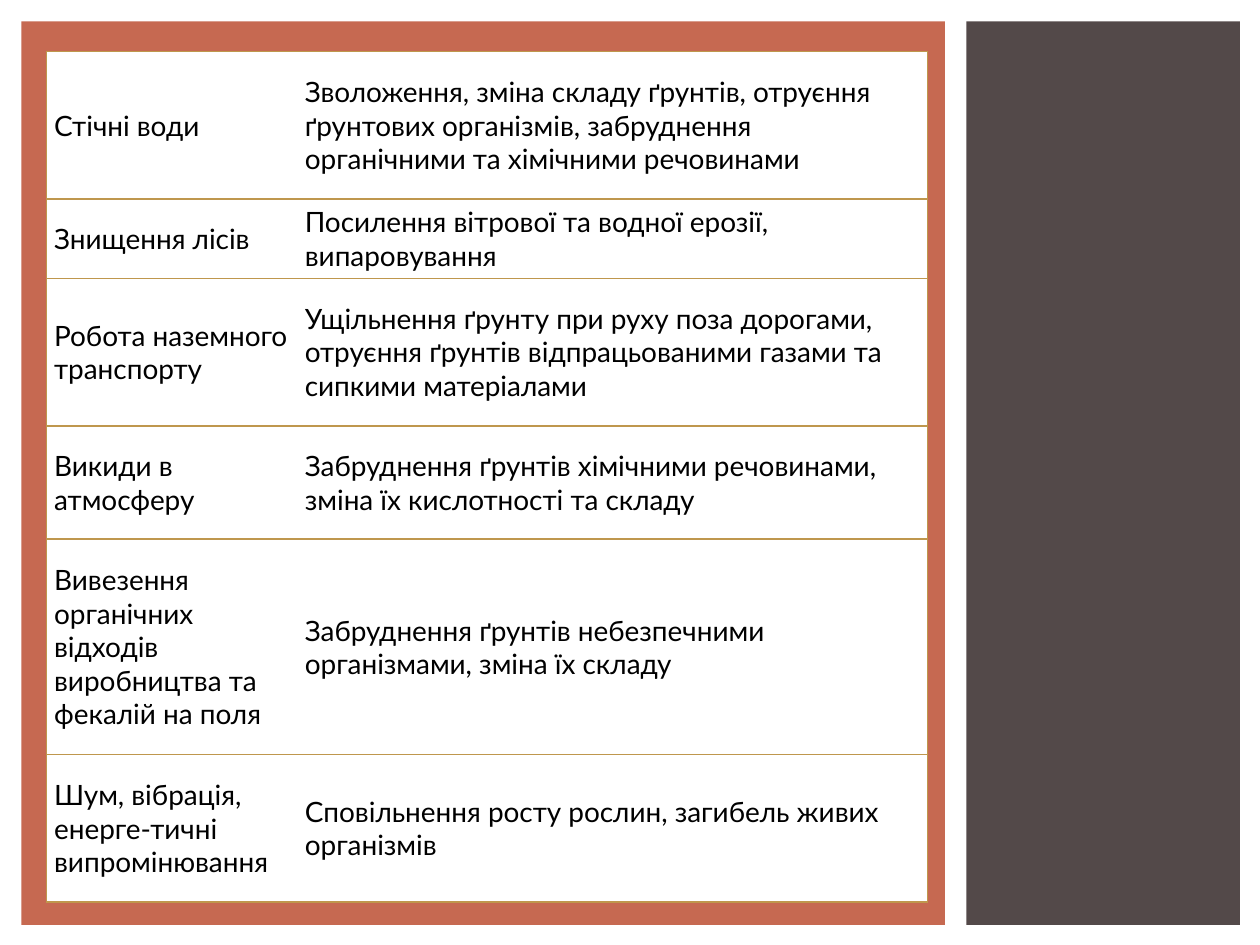
"""Build a slide with a table of soil impacts beside a dark side panel."""
from lxml import etree
from pptx import Presentation
from pptx.dml.color import RGBColor
from pptx.enum import shapes, text
from pptx.oxml import ns
from pptx.util import Inches, Pt

WHITE = RGBColor(0xFF, 0xFF, 0xFF)
BLACK = RGBColor(0x00, 0x00, 0x00)
GOLD = RGBColor(0xBF, 0x97, 0x4D)
TERRACOTTA = RGBColor(0xC6, 0x69, 0x51)
DARK_BROWN = RGBColor(0x53, 0x49, 0x49)

COLUMN_WIDTHS = (1.99, 5)
OUTER_SIDES = ("LTB", "RTB")
IMPACTS = (
    (1.17, "Стічні води",
     "Зволоження, зміна складу ґрунтів, отруєння ґрунтових організмів, "
     "забруднення органічними та хімічними речовинами"),
    (0.63, "Знищення лісів",
     "Посилення вітрової та водної ерозії, випаровування"),
    (1.17, "Робота наземного транспорту",
     "Ущільнення ґрунту при руху поза дорогами, отруєння ґрунтів "
     "відпрацьованими газами та сипкими матеріалами"),
    (0.9, "Викиди в атмосферу",
     "Забруднення ґрунтів хімічними речовинами, зміна їх кислотності та складу"),
    (1.71, "Вивезення органічних відходів виробництва та фекалій на поля",
     "Забруднення ґрунтів небезпечними організмами, зміна їх складу"),
    (1.17, "Шум, вібрація, енерге-тичні випромінювання",
     "Сповільнення росту рослин, загибель живих організмів"),
)
CELL_FORMAT = {
    "vertical_anchor": text.MSO_ANCHOR.MIDDLE,
    "margin_left": Inches(0.06),
    "margin_right": Inches(0.06),
    "margin_top": Inches(0.03),
    "margin_bottom": Inches(0.03),
}
FONT_FORMAT = {"name": "Lato", "size": Pt(16), "bold": False}


def add_panel(slide, left, width, color):
    """Add a full-height background panel."""
    panel = slide.shapes.add_shape(
        shapes.MSO_SHAPE.RECTANGLE,
        Inches(left), Inches(0.17), Inches(width), Inches(7.17))
    panel.shadow.inherit = False
    panel.fill.solid()
    panel.fill.fore_color.rgb = color
    panel.line.fill.background()


def set_borders(cell, sides):
    """Draw gold lines on the given sides of a cell and none on the others."""
    properties = cell._tc.get_or_add_tcPr()
    for position, side in enumerate("LRTB"):
        border = etree.Element(ns.qn(f"a:ln{side}"), w=str(Pt(1)))
        if side in sides:
            fill = etree.SubElement(border, ns.qn("a:solidFill"))
            etree.SubElement(fill, ns.qn("a:srgbClr"), val=str(GOLD))
        else:
            etree.SubElement(border, ns.qn("a:noFill"))
        properties.insert(position, border)


def fill_cell(cell, wording, sides):
    """Write and format one table cell."""
    cell.text = wording
    for name, value in CELL_FORMAT.items():
        setattr(cell, name, value)
    font = cell.text_frame.paragraphs[0].runs[0].font
    for name, value in FONT_FORMAT.items():
        setattr(font, name, value)
    font.color.rgb = BLACK
    cell.fill.solid()
    cell.fill.fore_color.rgb = WHITE
    set_borders(cell, sides)


def add_impact_table(slide):
    """Add the table of causes and their effects on soil."""
    height = sum(impact[0] for impact in IMPACTS)
    table = slide.shapes.add_table(
        len(IMPACTS), len(COLUMN_WIDTHS), Inches(0.37), Inches(0.41),
        Inches(sum(COLUMN_WIDTHS)), Inches(height)).table
    table.first_row = table.horz_banding = False
    for column, width in zip(table.columns, COLUMN_WIDTHS):
        column.width = Inches(width)
    for row, (row_height, *wordings) in zip(table.rows, IMPACTS):
        row.height = Inches(row_height)
        for cell, wording, sides in zip(row.cells, wordings, OUTER_SIDES):
            fill_cell(cell, wording, sides)


def main():
    """Build and save the presentation."""
    deck = Presentation()
    deck.slide_width, deck.slide_height = Inches(10), Inches(7.5)
    slide = deck.slides.add_slide(deck.slide_layouts[6])
    add_panel(slide, 7.67, 2.17, DARK_BROWN)
    add_panel(slide, 0.17, 7.33, TERRACOTTA)
    add_impact_table(slide)
    deck.save("out.pptx")


if __name__ == "__main__":
    main()
